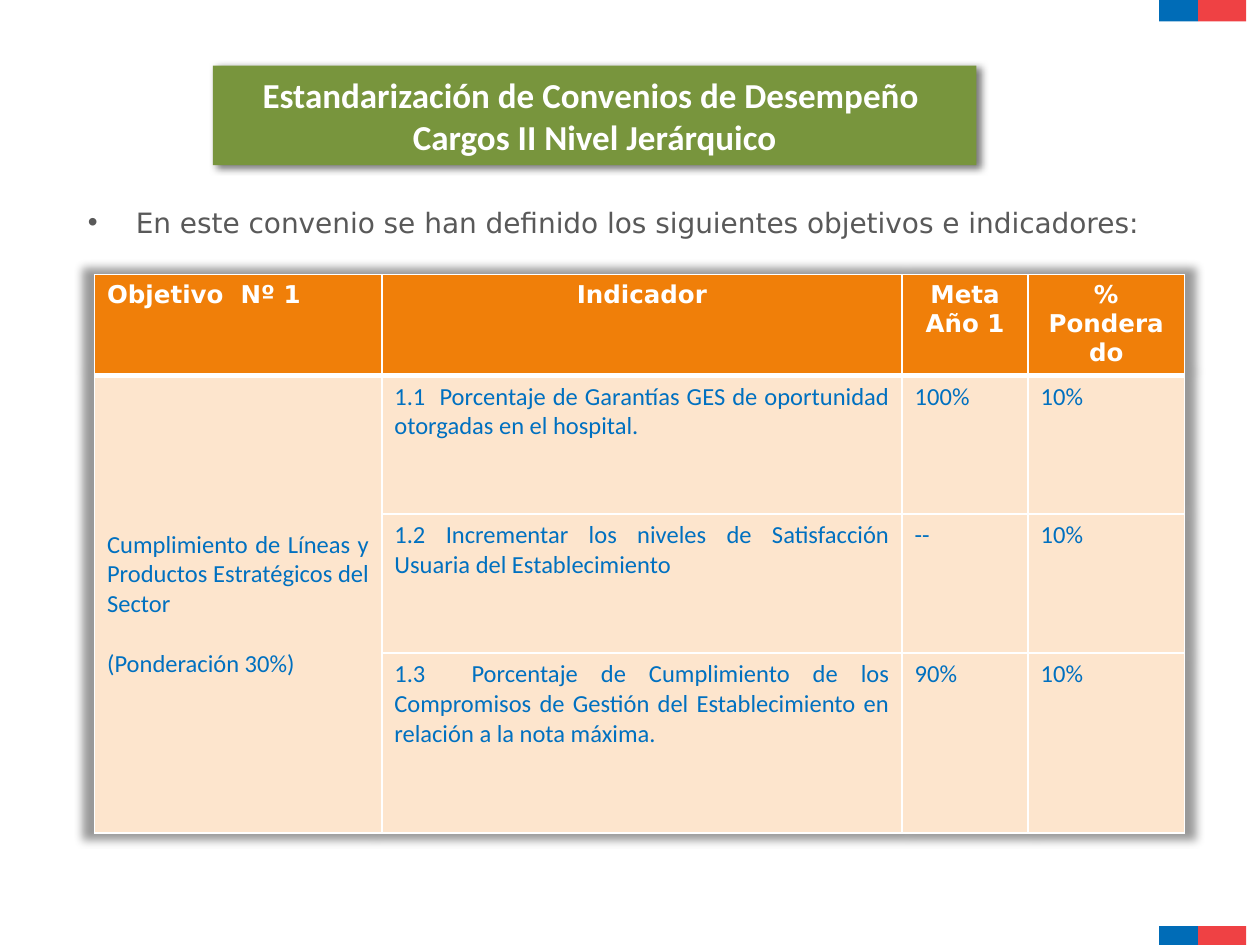
from lxml import etree
from pptx import Presentation
from pptx.dml.color import RGBColor
from pptx.enum.shapes import MSO_SHAPE
from pptx.enum.text import MSO_ANCHOR, PP_ALIGN
from pptx.oxml import parse_xml
from pptx.oxml.ns import qn
from pptx.util import Emu, Pt

RECTANGLE = MSO_SHAPE.RECTANGLE
MIDDLE, TOP = MSO_ANCHOR.MIDDLE, MSO_ANCHOR.TOP
LEFT, CENTER, JUSTIFY = PP_ALIGN.LEFT, PP_ALIGN.CENTER, PP_ALIGN.JUSTIFY

NAMESPACE = "http://schemas.openxmlformats.org/drawingml/2006/main"
PX_PER_INCH = 100
SANS, BODY = "DejaVu Sans", "Calibri"
WHITE, GRAY, BLUE = "FFFFFF", "595959", "0070C0"
GREEN, ORANGE, PEACH = "78953D", "F07F09", "FDE5CD"
FLAG_BLUE, FLAG_RED = "006CB7", "EF4144"

COLUMN_WIDTHS = [228, 413, 100, 124]
ROW_HEIGHTS = [63, 110, 110, 143]
HEADERS = ["Objetivo  Nº 1", "Indicador", "Meta Año 1", "% Ponderado"]
OBJECTIVE = [
    "Cumplimiento de Líneas y Productos Estratégicos del Sector",
    "(Ponderación 30%)",
]
INDICATORS = [
    ("1.1  Porcentaje de Garantías GES de oportunidad otorgadas en el hospital.", "100%", "10%"),
    ("1.2 Incrementar los niveles de Satisfacción Usuaria del Establecimiento", "--", "10%"),
    ("1.3  Porcentaje de Cumplimiento de los Compromisos de Gestión del "
     "Establecimiento en relación a la nota máxima.", "90%", "10%"),
]


def px(length):
    return Emu(length * 914400 // PX_PER_INCH)


def color(value):
    return RGBColor.from_string(value)


def style_paragraph(paragraph, font_name, size, text_color, alignment, bold=False):
    paragraph.alignment = alignment
    font = paragraph.font
    font.name, font.size, font.bold = font_name, Pt(size), bold
    font.color.rgb = color(text_color)


def add_rectangle(slide, left, top, width, height, fill):
    shape = slide.shapes.add_shape(RECTANGLE, px(left), px(top), px(width), px(height))
    shape.shadow.inherit = False
    shape.fill.solid()
    shape.fill.fore_color.rgb = color(fill)
    shape.line.fill.background()
    return shape


def add_shadow(properties, alpha, **attributes):
    effects = properties.find(qn("a:effectLst"))
    if effects is None:
        effects = etree.SubElement(properties, qn("a:effectLst"))
    settings = " ".join(f'{name}="{value}"' for name, value in attributes.items())
    effects.append(parse_xml(
        f'<a:outerShdw xmlns:a="{NAMESPACE}" {settings} rotWithShape="0">'
        f'<a:srgbClr val="000000"><a:alpha val="{alpha * 1000}"/></a:srgbClr></a:outerShdw>'))


def add_flag(slide, left, top):
    add_rectangle(slide, left, top, 31, 17, FLAG_BLUE)
    add_rectangle(slide, left + 31, top, 38, 17, FLAG_RED)


def add_title(slide, left, top, width, height):
    banner = add_rectangle(slide, left, top, width, height, GREEN)
    add_shadow(banner._element.spPr, 53, blurRad=Pt(4.5), dist=Pt(2.6), dir=30 * 60000)
    frame = banner.text_frame
    frame.word_wrap = True
    frame.vertical_anchor = MIDDLE
    frame.text = "Estandarización de Convenios de Desempeño \vCargos II Nivel Jerárquico"
    style_paragraph(frame.paragraphs[0], BODY, 20, WHITE, CENTER, bold=True)


def add_introduction(slide, left, top, width, height):
    box = slide.shapes.add_textbox(px(left), px(top), px(width), px(height))
    frame = box.text_frame
    frame.word_wrap = True
    frame.text = "En este convenio se han definido los siguientes objetivos e indicadores:"
    paragraph = frame.paragraphs[0]
    style_paragraph(paragraph, SANS, 16, GRAY, JUSTIFY)
    properties = paragraph._p.get_or_add_pPr()
    properties.set("marL", str(px(38)))
    properties.set("indent", str(-px(38)))
    bullet = parse_xml(f'<a:buChar xmlns:a="{NAMESPACE}" char="•"/>')
    bullet_font = parse_xml(f'<a:buFont xmlns:a="{NAMESPACE}" typeface="Arial"/>')
    properties.insert(0, bullet_font)
    properties.insert(1, bullet)


def set_borders(cell, widths):
    properties = cell._tc.get_or_add_tcPr()
    for index, (side, width) in enumerate(widths.items()):
        properties.insert(index, parse_xml(
            f'<a:ln{side} xmlns:a="{NAMESPACE}" w="{Pt(width)}"><a:solidFill>'
            f'<a:srgbClr val="{WHITE}"/></a:solidFill></a:ln{side}>'))


def fill_cell(cell, lines, is_header, alignment, anchor=TOP):
    cell.fill.solid()
    cell.fill.fore_color.rgb = color(ORANGE if is_header else PEACH)
    cell.vertical_anchor = anchor
    cell.text = "\n".join(lines)
    font_name, text_color = (SANS, WHITE) if is_header else (BODY, BLUE)
    for paragraph in cell.text_frame.paragraphs:
        style_paragraph(paragraph, font_name, 14, text_color, alignment, is_header)
    for paragraph in cell.text_frame.paragraphs[:-1]:
        paragraph.space_after = Pt(17)


def add_objective_table(slide, left, top):
    frame = slide.shapes.add_table(
        len(ROW_HEIGHTS), len(COLUMN_WIDTHS), px(left), px(top),
        px(sum(COLUMN_WIDTHS)), px(sum(ROW_HEIGHTS)))
    table = frame.table
    table.horz_banding = False
    table_properties = table._tbl.tblPr
    add_shadow(table_properties, 40, blurRad=Pt(5), sx=102000, sy=102000, algn="ctr")
    table_properties.insert(0, table_properties.find(qn("a:effectLst")))
    for column, width in zip(table.columns, COLUMN_WIDTHS):
        column.width = px(width)
    for row, height in zip(table.rows, ROW_HEIGHTS):
        row.height = px(height)

    for index, header in enumerate(HEADERS):
        fill_cell(table.cell(0, index), [header], True, CENTER if index else LEFT)
    table.cell(1, 0).merge(table.cell(len(INDICATORS), 0))
    fill_cell(table.cell(1, 0), OBJECTIVE, False, JUSTIFY, MIDDLE)
    for row_index, values in enumerate(INDICATORS, start=1):
        for column_index, value in enumerate(values, start=1):
            fill_cell(table.cell(row_index, column_index), [value], False, JUSTIFY)

    for row_index, row in enumerate(table.rows):
        top_width = 3 if row_index == 1 else 1
        bottom_width = 3 if row_index == 0 else 1
        for cell in row.cells:
            set_borders(cell, {"L": 1, "R": 1, "T": top_width, "B": bottom_width})


def main():
    presentation = Presentation()
    presentation.slide_width, presentation.slide_height = px(1000), px(750)
    slide = presentation.slides.add_slide(presentation.slide_layouts[6])
    for top in (0, 735):
        add_flag(slide, 920, top)
    add_introduction(slide, 60, 158, 916, 36)
    add_objective_table(slide, 75, 218)
    add_title(slide, 169, 52, 606, 79)
    presentation.save("out.pptx")


if __name__ == "__main__":
    main()
